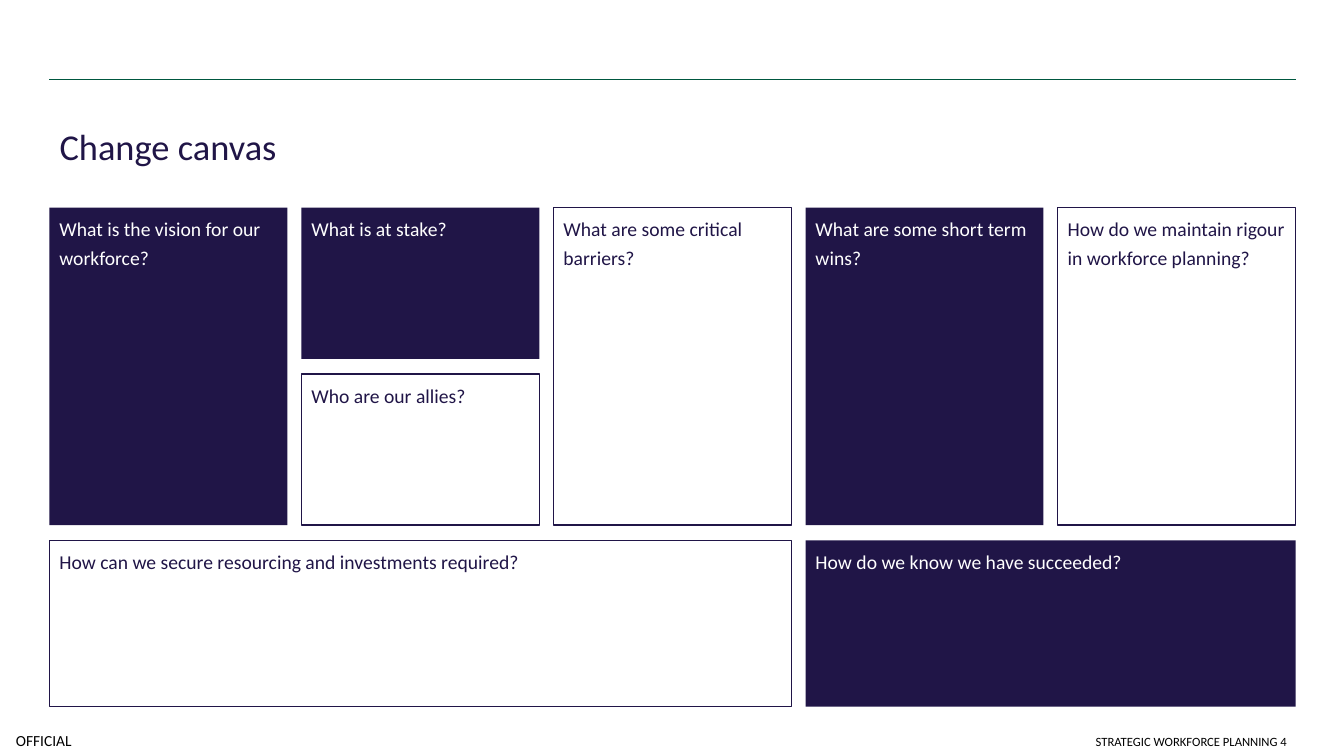
import pptx
import pptx.dml.color
import pptx.enum.shapes
import pptx.enum.text
import pptx.util
from lxml import etree

PX = 9144  # 100 px to the inch
NAVY, WHITE, GREEN, BLACK = "201547", "FFFFFF", "00573F", "000000"
LEFT, TOP, COL, ROW, GAP = 49, 206, 250, 165, 14

# question, column, row, columns spanned, height, dark
CARDS = [
    ("What is the vision for our workforce?", 0, 0, 1, 315, True),
    ("What is at stake?", 1, 0, 1, 150, True),
    ("Who are our allies?", 1, 1, 1, 150, False),
    ("What are some critical barriers?", 2, 0, 1, 315, False),
    ("What are some short term wins?", 3, 0, 1, 315, True),
    ("How do we maintain rigour in workforce planning?", 4, 0, 1, 315, False),
    ("How can we secure resourcing and investments required?", 0, 2, 3, 165, False),
    ("How do we know we have succeeded?", 3, 2, 2, 165, True),
]

ALIGN = pptx.enum.text.PP_ALIGN
ANCHOR = pptx.enum.text.MSO_ANCHOR


def px(*nums):
    return [pptx.util.Emu(num * PX) for num in nums]


def color(code):
    return pptx.dml.color.RGBColor.from_string(code)


def write(shape, text, size, tint, align=ALIGN.LEFT, anchor=ANCHOR.TOP, lead=None):
    frame = shape.text_frame
    frame.word_wrap = True
    frame.vertical_anchor = anchor
    para = frame.paragraphs[0]
    para.alignment = align
    para.line_spacing = lead
    run = para.add_run()
    run.text = text
    run.font.name = "Calibri"
    run.font.size = pptx.util.Pt(size)
    run.font.color.rgb = color(tint)
    return frame


def rule(slide, x1, y1, x2, y2):
    line = slide.shapes.add_connector(
        pptx.enum.shapes.MSO_CONNECTOR.STRAIGHT, *px(x1, y1, x2, y2))
    line.line.color.rgb = color(GREEN)
    line.line.width = pptx.util.Pt(1)
    etree.SubElement(line._element.spPr, pptx.oxml.ns.qn("a:effectLst"))


def title(slide, text):
    shape = slide.shapes.title
    shape.left, shape.top, shape.width, shape.height = px(LEFT, 89, 1235, 102)
    write(shape, text, 26, NAVY, anchor=ANCHOR.MIDDLE, lead=1.2)


def card(slide, text, col, row, span, high, dark):
    shape = slide.shapes.add_shape(
        pptx.enum.shapes.MSO_SHAPE.RECTANGLE,
        *px(LEFT + col * COL, TOP + row * ROW, span * COL - GAP, high))
    shape.shadow.inherit = False
    shape.fill.solid()
    shape.fill.fore_color.rgb = color(NAVY if dark else WHITE)
    if dark:
        shape.line.fill.background()
    else:
        shape.line.color.rgb = color(NAVY)
        shape.line.width = pptx.util.Pt(1)
    frame = write(shape, text, 14, WHITE if dark else NAVY, lead=1.2)
    frame.paragraphs[0].space_after = pptx.util.Pt(9)


def label(slide, text, box, size, align, anchor):
    shape = slide.shapes.add_textbox(*px(*box))
    return write(shape, text, size, BLACK, align, anchor)


def main():
    deck = pptx.Presentation()
    deck.slide_width = pptx.util.Inches(13.33)
    deck.slide_height = pptx.util.Inches(7.5)
    slide = deck.slides.add_slide(deck.slide_layouts[5])
    rule(slide, LEFT, 79, 1285, 79)
    mark = label(slide, "OFFICIAL", (0, 719, 87, 31), 11, ALIGN.CENTER, ANCHOR.MIDDLE)
    mark.margin_left = mark.margin_right = mark.margin_top = mark.margin_bottom = 0
    title(slide, "Change canvas")
    for item in CARDS:
        card(slide, *item)
    label(slide, "STRATEGIC WORKFORCE PLANNING 4", (684, 709, 602, 39), 9,
          ALIGN.RIGHT, ANCHOR.BOTTOM)
    deck.save("out.pptx")


if __name__ == "__main__":
    main()
